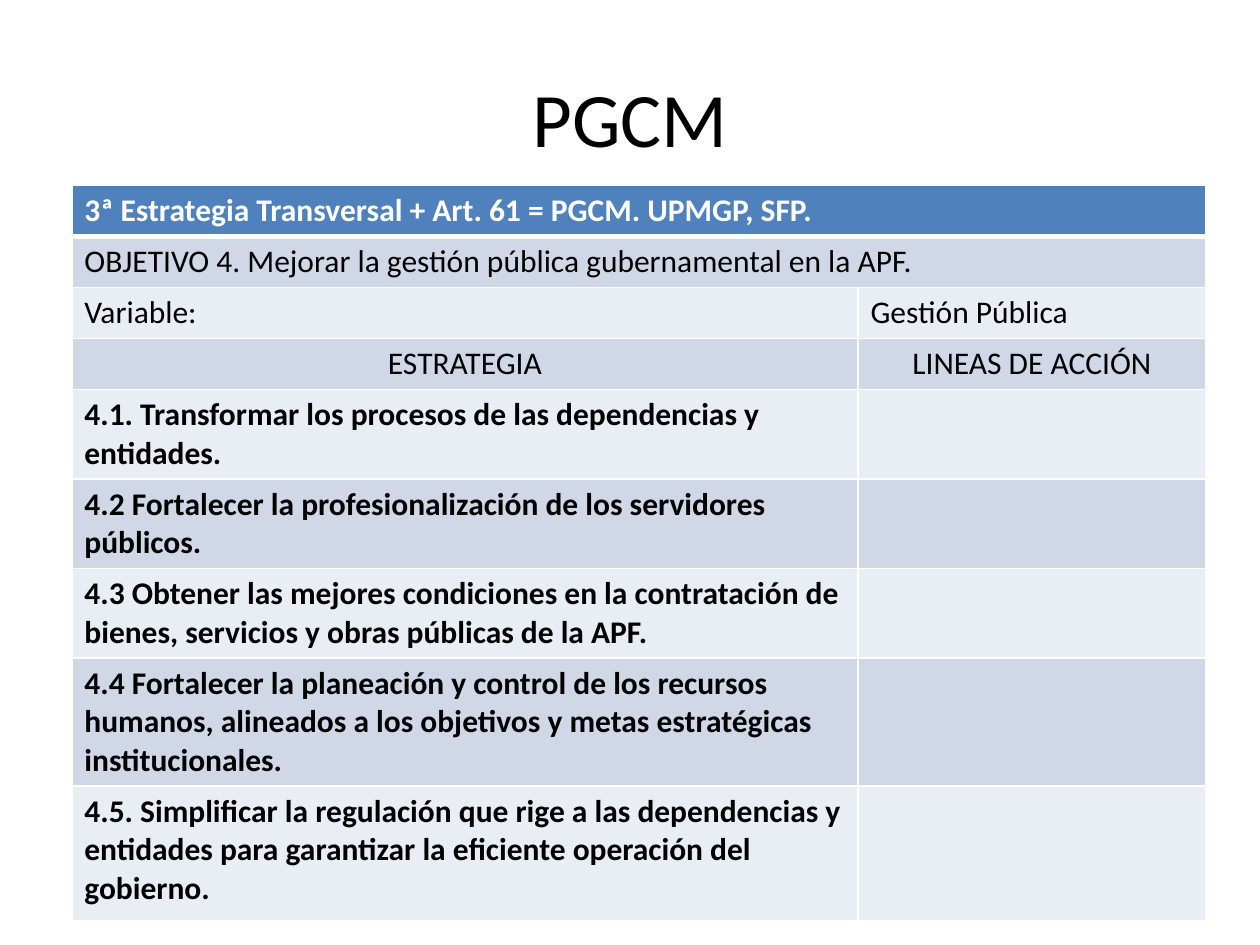
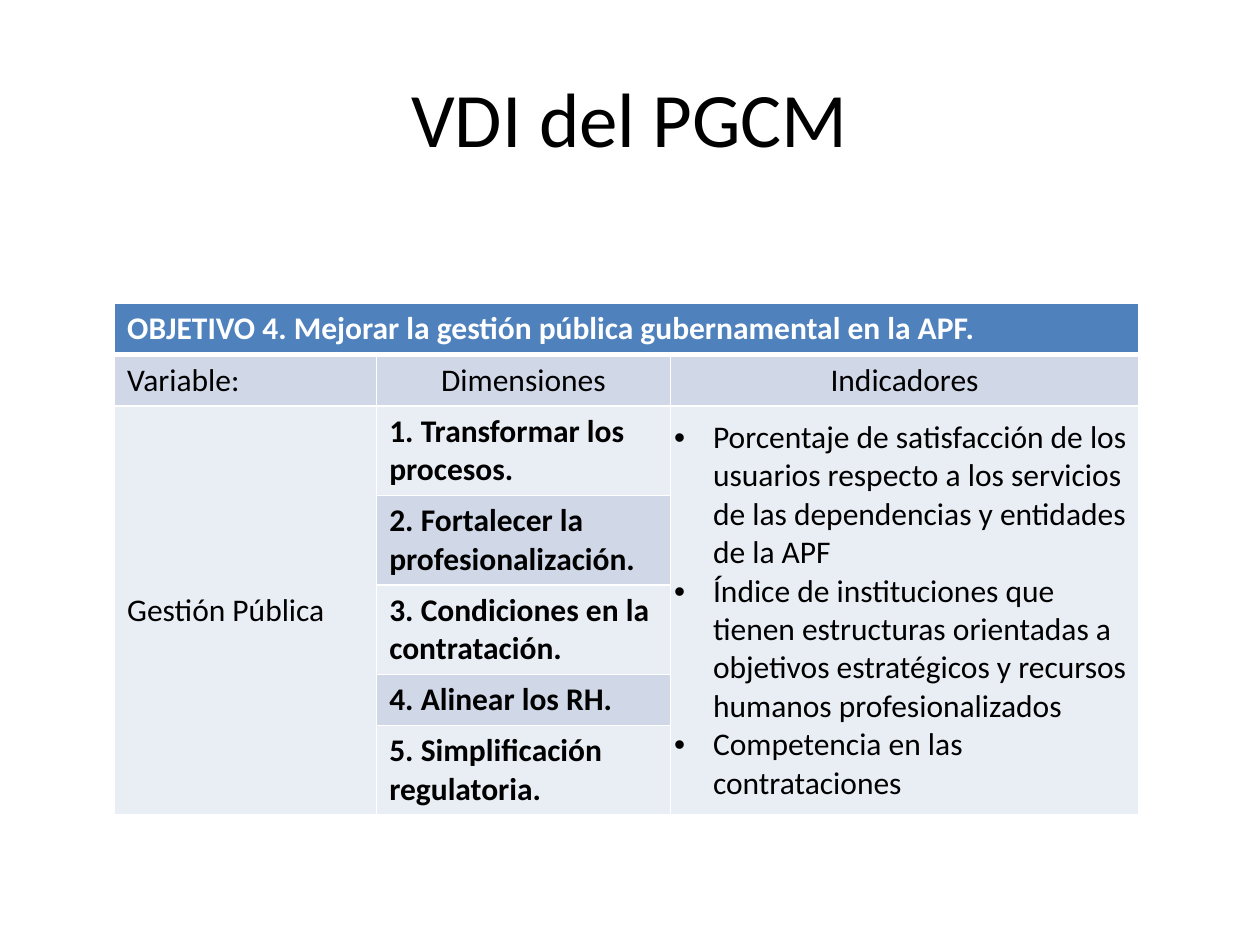
from pptx import Presentation
from pptx.dml.color import RGBColor
from pptx.enum.text import MSO_ANCHOR, PP_ALIGN
from pptx.util import Inches, Pt
from lxml import etree

CENTER, LEFT = PP_ALIGN.CENTER, PP_ALIGN.LEFT
MIDDLE, TOP = MSO_ANCHOR.MIDDLE, MSO_ANCHOR.TOP
FONT = "Calibri"
BLACK, WHITE = "000000", "FFFFFF"
HEADER, BANDS = "4F81BD", ("E9EDF4", "D0D8E8")
NS = "http://schemas.openxmlformats.org/drawingml/2006/main"
TITLE_ONLY = 5


def rgb(value):
    return RGBColor.from_string(value)


def sub(parent, tag, **attrs):
    return etree.SubElement(parent, f"{{{NS}}}{tag}", **attrs)


def format_text(tf, size, color=BLACK, bold=False, align=LEFT):
    for p in tf.paragraphs:
        p.alignment = align
        for r in p.runs:
            r.font.name, r.font.size, r.font.bold = FONT, Pt(size), bold
            r.font.color.rgb = rgb(color)


def add_slide(prs, title):
    s = prs.slides.add_slide(prs.slide_layouts[TITLE_ONLY])
    shape = s.shapes.title
    shape.left, shape.top = Inches(0.5), Inches(0.3)
    shape.width, shape.height = Inches(9), Inches(1.25)
    tf = shape.text_frame
    tf.text = title
    tf.vertical_anchor = MIDDLE
    format_text(tf, 44, align=CENTER)
    return s


def style_cell(cell, row):
    """White rules, thick under the header, then the band fill."""
    tc_pr = cell._tc.get_or_add_tcPr()
    for side in "LRTB":
        thick = (row, side) in ((0, "B"), (1, "T"))
        ln = sub(tc_pr, f"ln{side}", w=str(Pt(3 if thick else 1)))
        sub(sub(ln, "solidFill"), "srgbClr", val=WHITE)
    cell.fill.solid()
    cell.fill.fore_color.rgb = rgb(BANDS[row % 2] if row else HEADER)


def add_table(s, left, top, widths, heights, rows, centered_row, bold_column):
    """Banded table; rows after centered_row are bold in bold_column."""
    frame = s.shapes.add_table(len(heights), len(widths), Inches(left), Inches(top),
                               Inches(sum(widths)), Inches(sum(heights)))
    table = frame.table
    table.first_row = table.horz_banding = False
    for column, width in zip(table.columns, widths):
        column.width = Inches(width)
    for row, height in zip(table.rows, heights):
        row.height = Inches(height)
    for i, texts in enumerate(rows):
        for j, text in enumerate(texts):
            cell = table.cell(i, j)
            style_cell(cell, i)
            if text:
                cell.text_frame.text = text
                bold = i == 0 or (i > centered_row and j == bold_column)
                centered = i == centered_row and text != "Variable:"
                format_text(cell.text_frame, 18, BLACK if i else WHITE, bold,
                            CENTER if centered else LEFT)
    return table


def merge(table, first, last):
    table.cell(*first).merge(table.cell(*last))


def add_bullets(cell):
    cell.margin_left = cell.margin_right = Inches(0.03)
    cell.margin_top = cell.margin_bottom = 0
    for p in cell.text_frame.paragraphs:
        p_pr = p._p.get_or_add_pPr()
        p_pr.set("marL", str(Inches(0.31)))
        p_pr.set("indent", str(Inches(-0.31)))
        sub(p_pr, "buFont", typeface="Arial")
        sub(p_pr, "buChar", char="•")


OBJECTIVE = "OBJETIVO 4. Mejorar la gestión pública gubernamental en la APF."
VARIABLE = "Gestión Pública"

STRATEGIES = [
    "4.1. Transformar los procesos de las dependencias y entidades.",
    "4.2 Fortalecer la profesionalización de los servidores públicos.",
    "4.3 Obtener las mejores condiciones en la contratación de bienes, "
    "servicios y obras públicas de la APF.",
    "4.4 Fortalecer la planeación y control de los recursos humanos, "
    "alineados a los objetivos y metas estratégicas institucionales.",
    "4.5. Simplificar la regulación que rige a las dependencias y entidades "
    "para garantizar la eficiente operación del gobierno.",
]
DIMENSIONS = [
    "1. Transformar los procesos.",
    "2. Fortalecer la profesionalización.",
    "3. Condiciones en la contratación.",
    "4. Alinear los RH.",
    "5. Simplificación regulatoria.",
]
INDICATORS = [
    "Porcentaje de satisfacción de los usuarios respecto a los servicios "
    "de las dependencias y entidades de la APF",
    "Índice de instituciones que tienen estructuras orientadas a objetivos "
    "estratégicos y recursos humanos profesionalizados",
    "Competencia en las contrataciones",
]


def strategies_slide(prs):
    s = add_slide(prs, "PGCM")
    rows = [
        ["3ª Estrategia Transversal + Art. 61 = PGCM. UPMGP, SFP.", ""],
        [OBJECTIVE, ""],
        ["Variable:", VARIABLE],
        ["ESTRATEGIA", "LINEAS DE ACCIÓN"],
    ] + [[strategy, ""] for strategy in STRATEGIES]
    table = add_table(s, 0.57, 1.47, [6.24, 2.76], [0.39] * 4 + [0.68] * 4 + [1.07],
                      rows, centered_row=3, bold_column=0)
    for i in (0, 1):
        merge(table, (i, 0), (i, 1))


def indicators_slide(prs):
    s = add_slide(prs, "VDI del PGCM")
    rows = [
        [OBJECTIVE, "", ""],
        ["Variable:", "Dimensiones", "Indicadores"],
    ] + [["", dimension, ""] for dimension in DIMENSIONS]
    rows[2][0], rows[2][2] = VARIABLE, "\n".join(INDICATORS)
    table = add_table(s, 0.91, 2.41, [2.08, 2.33, 3.72],
                      [0.39, 0.39, 0.37, 0.45, 0.39, 0.32, 0.3],
                      rows, centered_row=1, bold_column=1)
    merge(table, (0, 0), (0, 2))
    # Variable and indicators span all the dimensions
    for j in (0, 2):
        merge(table, (2, j), (6, j))
        table.cell(2, j).vertical_anchor = MIDDLE
    add_bullets(table.cell(2, 2))


def main():
    prs = Presentation()
    prs.slide_width, prs.slide_height = Inches(10), Inches(7.5)
    strategies_slide(prs)
    indicators_slide(prs)
    prs.save("out.pptx")


if __name__ == "__main__":
    main()
